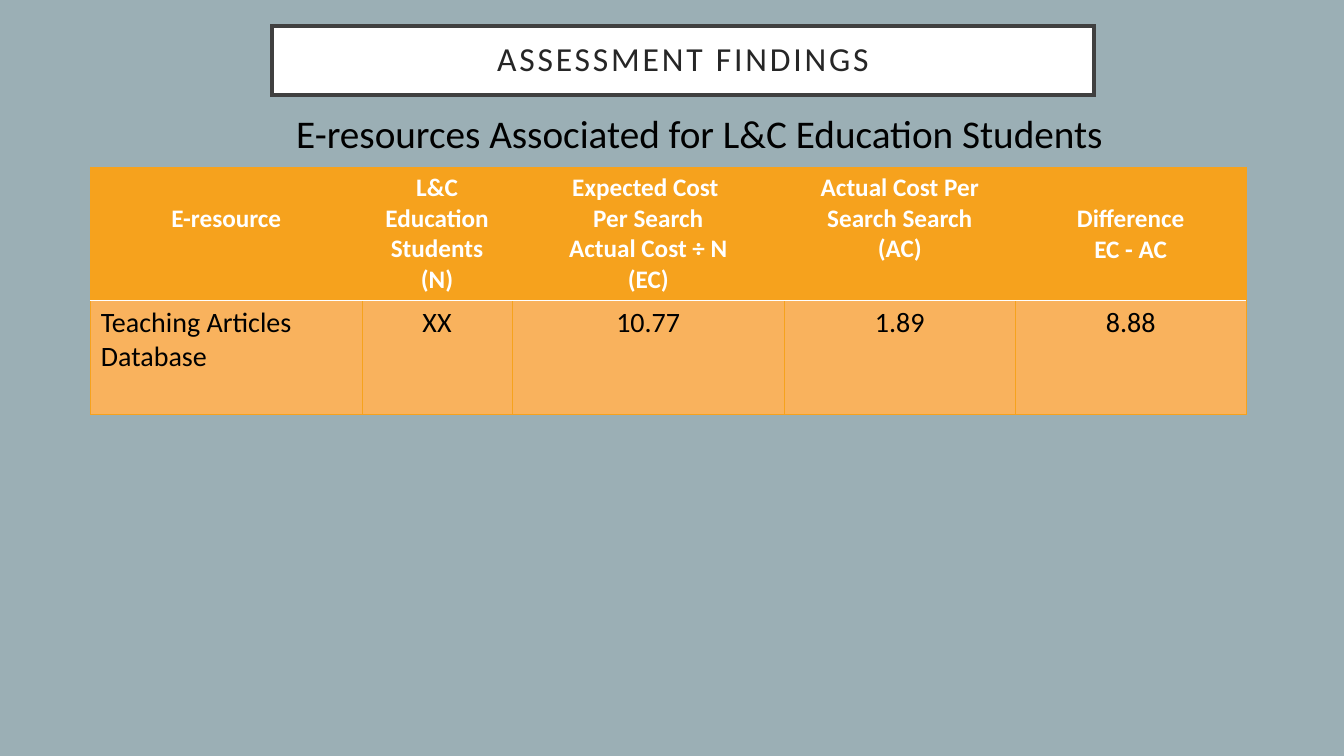
from lxml.etree import SubElement
from pptx import Presentation
from pptx.dml.color import RGBColor
from pptx.enum.shapes import MSO_SHAPE
from pptx.enum.text import MSO_ANCHOR, PP_ALIGN
from pptx.oxml import parse_xml
from pptx.oxml.ns import nsdecls, qn
from pptx.util import Inches, Pt

# Content
TITLE = "ASSESSMENT FINDINGS"
LEAD = "E-resources Associated for L&C Education Students"
HEADS = [
    ["E-resource"],
    ["L&C Education Students", "(N)"],
    ["Expected Cost ", "Per Search", "Actual Cost ÷ N", "(EC)"],
    ["Actual Cost Per Search Search", "(AC)"],
    ["Difference", "EC - AC"],
]
COSTS = [["Teaching Articles Database"], ["XX"], ["10.77"], ["1.89"], ["8.88"]]
LOWERED = (0, 4)  # header columns that start one line down
WIDTHS = [2.69, 1.49, 2.7, 2.29, 2.29]
HEIGHTS = [1.32, 1.13]

THEME = {
    "font": "Calibri", "back": "9BAFB5", "white": "FFFFFF", "black": "000000",
    "frame": "404040", "title": "262626", "head": "F6A21D", "body": "F9B25D",
    "title_pt": 24, "lead_pt": 28, "head_pt": 18, "body_pt": 20,
}


def color(name):
    return RGBColor.from_string(THEME[name])


def paint(part, name):
    part.fill.solid()
    part.fill.fore_color.rgb = color(name)


def apply(part, values):
    for name, value in values.items():
        setattr(part, name, value)


def write(frame, lines, size, ink, align, bold=False):
    for i, line in enumerate(lines):
        para = frame.paragraphs[0] if i == 0 else frame.add_paragraph()
        para.alignment = align
        run = para.add_run()
        run.text = line
        apply(run.font, {"name": THEME["font"], "size": Pt(THEME[size]), "bold": bold})
        run.font.color.rgb = color(ink)


def border(cell, sides):
    props = cell._tc.get_or_add_tcPr()
    for i, (side, (ink, width)) in enumerate(sides.items()):
        props.insert(i, parse_xml(
            f'<a:ln{side} {nsdecls("a")} w="{Pt(width)}"><a:solidFill>'
            f'<a:srgbClr val="{THEME[ink]}"/></a:solidFill></a:ln{side}>'))


deck = Presentation()
apply(deck, {"slide_width": Inches(13.33), "slide_height": Inches(7.5)})
slide = deck.slides.add_slide(deck.slide_layouts[6])
paint(slide.background, "back")

# Title frame
box = slide.shapes.add_shape(
    MSO_SHAPE.RECTANGLE, Inches(2.7), Inches(0.26), Inches(8.15), Inches(0.68))
box.shadow.inherit = False
paint(box, "white")
box.line.color.rgb = color("frame")
box.line.width = Pt(3)
SubElement(box.line._get_or_add_ln(), qn("a:miter"), lim="800000")
apply(box.text_frame, {
    "word_wrap": True, "vertical_anchor": MSO_ANCHOR.MIDDLE,
    "margin_left": Inches(0.3), "margin_right": Inches(0.3),
    "margin_top": Inches(0.2), "margin_bottom": Inches(0.2)})
write(box.text_frame, [TITLE], "title_pt", "title", PP_ALIGN.CENTER)
para = box.text_frame.paragraphs[0]
para.line_spacing = 0.9
para.runs[0].font._element.set("spc", "200")

# Cost table
grid = slide.shapes.add_table(
    2, len(WIDTHS), Inches(0.9), Inches(1.66),
    Inches(sum(WIDTHS)), Inches(sum(HEIGHTS))).table
for col, width in zip(grid.columns, WIDTHS):
    col.width = Inches(width)
for row, height in zip(grid.rows, HEIGHTS):
    row.height = Inches(height)
edge, rule = ("head", 0.5), ("white", 1.5)
for c, (head, cost) in enumerate(zip(HEADS, COSTS)):
    top, low = grid.cell(0, c), grid.cell(1, c)
    paint(top, "head")
    paint(low, "body")
    if c in LOWERED:
        top.margin_top = Inches(0.36)
    write(top.text_frame, head, "head_pt", "white", PP_ALIGN.CENTER, True)
    align = PP_ALIGN.CENTER if c else PP_ALIGN.LEFT
    write(low.text_frame, cost, "body_pt", "black", align)
    border(top, {"L": edge, "R": edge, "T": edge, "B": rule})
    border(low, {"L": edge, "R": edge, "T": rule, "B": edge})

# Lead line
note = slide.shapes.add_textbox(Inches(2.84), Inches(1.04), Inches(8.84), Inches(0.57))
note.text_frame.word_wrap = True
write(note.text_frame, [LEAD], "lead_pt", "black", PP_ALIGN.LEFT)

deck.save("out.pptx")
